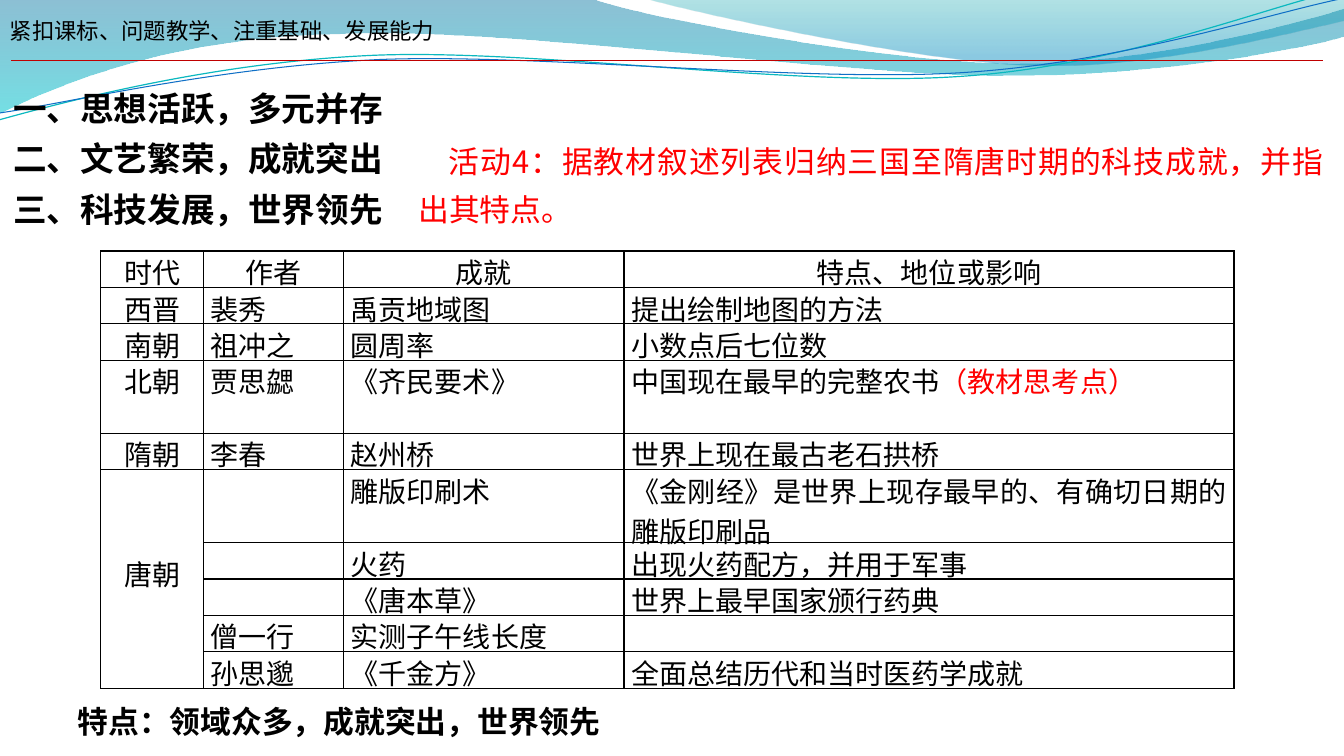
from dataclasses import dataclass
from math import cos, radians, sin

from lxml import etree
from pptx import Presentation
from pptx.dml.color import RGBColor
from pptx.enum.shapes import MSO_CONNECTOR
from pptx.enum.text import MSO_ANCHOR, PP_ALIGN
from pptx.oxml.ns import qn
from pptx.util import Inches, Pt

STRAIGHT = MSO_CONNECTOR.STRAIGHT
TOP, MIDDLE = MSO_ANCHOR.TOP, MSO_ANCHOR.MIDDLE
LEFT, CENTER, JUSTIFY = PP_ALIGN.LEFT, PP_ALIGN.CENTER, PP_ALIGN.JUSTIFY


@dataclass(frozen=True)
class Theme:
    font: str = "Noto Sans CJK SC"
    ink: str = "000000"
    accent: str = "FF0000"
    rule: str = "C00000"
    teal_line: str = "0AB8BF"
    blue_line: str = "0F6FC6"
    wide_wave: tuple = ((0, "0074A1", 45), (100, "00C6CF", 55))
    corner_wave: tuple = ((0, "00A1A9", 30), (80, "008BBF", 45))
    banner: int = 16
    table: int = 20
    note: int = 22
    heading: int = 24


THEME = Theme()

WIDE_WAVE = [
    (0, 0), (5.87, -0.01),
    (6.34, 0.17, 8.85, 0.63, 10.11, 0.63),
    (11.38, 0.63, 12.78, 0.26, 13.33, 0.09),
    (13.35, 0.36),
    (13.11, 0.44, 11.6, 0.76, 9.94, 0.75),
    (8.29, 0.75, 5.09, 0.28, 3.43, 0.34),
    (1.72, 0.36, 0.61, 0.83, -0.01, 1.13),
    (0, 0),
]
CORNER_WAVE = [
    (6.39, -0.01),
    (6.79, 0.11, 9.09, 0.62, 10.25, 0.65),
    (11.41, 0.69, 12.82, 0.32, 13.33, 0.21),
    (13.33, 0), (6.39, -0.01),
]
TEAL_CURVE = [
    (-0.01, 1.19),
    (0.64, 1.01, 2.11, 0.62, 3.69, 0.55),
    (5.27, 0.48, 7.9, 0.87, 9.5, 0.76),
    (11.1, 0.66, 12.52, 0.08, 13.31, -0.1),
]
BLUE_CURVE = [
    (0, 1.12),
    (0.63, 1.03, 2.18, 0.66, 3.78, 0.59),
    (5.37, 0.53, 7.96, 0.82, 9.55, 0.72),
    (11.15, 0.62, 12.55, 0.14, 13.34, -0.02),
]
CURVE_TILT = -2.7
CURVE_CENTER = (6.66, 0.58)

COLUMN_WIDTHS = [1.02, 1.39, 2.78, 6.05]
TALL_ROWS = (3, 5)
TANG_ROWS = (5, 9)
ROWS = [
    ["时代", "作者", "成就", "特点、地位或影响"],
    ["西晋", "裴秀", "禹贡地域图", "提出绘制地图的方法"],
    ["南朝", "祖冲之", "圆周率", "小数点后七位数"],
    ["北朝", "贾思勰", "《齐民要术》", "中国现在最早的完整农书|（教材思考点）"],
    ["隋朝", "李春", "赵州桥", "世界上现在最古老石拱桥"],
    ["唐朝", "", "雕版印刷术", "《金刚经》是世界上现存最早的、有确切日期的雕版印刷品"],
    ["", "", "火药", "出现火药配方，并用于军事"],
    ["", "", "《唐本草》", "世界上最早国家颁行药典"],
    ["", "僧一行", "实测子午线长度", ""],
    ["", "孙思邈", "《千金方》", "全面总结历代和当时医药学成就"],
]


def set_values(target, values):
    for name, value in values.items():
        setattr(target, name, value)


def add_run(paragraph, text, size, color, bold=False):
    run = paragraph.add_run()
    run.text = text
    set_values(run.font, {"size": Pt(size), "name": THEME.font, "bold": bold})
    run.font.color.rgb = RGBColor.from_string(color)
    properties = run._r.get_or_add_rPr()
    etree.SubElement(properties, qn("a:ea"), typeface=THEME.font)


def add_text(slide, box, lines, size, color, bold=False, spacing=1.0,
             align=JUSTIFY, inset=(0, 0), indent=0):
    frame = slide.shapes.add_textbox(*map(Inches, box)).text_frame
    side, edge = map(Inches, inset)
    set_values(frame, {"word_wrap": True, "margin_left": side, "margin_right": side,
                       "margin_top": edge, "margin_bottom": edge})
    for index, line in enumerate(lines):
        paragraph = frame.add_paragraph() if index else frame.paragraphs[0]
        set_values(paragraph, {"alignment": align, "line_spacing": spacing})
        if indent:
            paragraph._p.get_or_add_pPr().set("indent", str(Inches(indent)))
        add_run(paragraph, line, size, color, bold)


def turn(point, center, degrees):
    angle = radians(degrees)
    x, y = point[0] - center[0], point[1] - center[1]
    return (center[0] + x * cos(angle) - y * sin(angle),
            center[1] + x * sin(angle) + y * cos(angle))


def add_outline(slide, segments, origin, tilt=0):
    points = [turn(segment[i:i + 2], CURVE_CENTER, -tilt)
              for segment in segments for i in range(0, len(segment), 2)]
    points = [(Inches(origin[0] + x), Inches(origin[1] + y)) for x, y in points]
    builder = slide.shapes.build_freeform(*points[0])
    builder.add_line_segments(points[1:], close=not tilt)
    shape = builder.convert_to_shape()
    shape.shadow.inherit = False
    shape.rotation = tilt
    steps = iter(list(shape._element.iter(qn("a:lnTo"))))
    for segment in segments[1:]:
        step = next(steps)
        if len(segment) == 6:
            step.tag
            bezier = etree.Element(qn("a:cubicBezTo"))
            step.addprevious(bezier)
            for part in (step, next(steps), next(steps)):
                bezier.append(part[0])
                part.getparent().remove(part)
    return shape


def add_wave(slide, segments, origin, stops):
    shape = add_outline(slide, segments, origin)
    shape.line.fill.background()
    gradient = etree.Element(qn("a:gradFill"), rotWithShape="1")
    stop_list = etree.SubElement(gradient, qn("a:gsLst"))
    for position, color, opacity in stops:
        stop = etree.SubElement(stop_list, qn("a:gs"), pos=str(position * 1000))
        fill = etree.SubElement(stop, qn("a:srgbClr"), val=color)
        etree.SubElement(fill, qn("a:alpha"), val=str(opacity * 1000))
    etree.SubElement(gradient, qn("a:lin"), ang="5400000", scaled="0")
    shape._element.spPr.find(qn("a:custGeom")).addnext(gradient)


def add_curve(slide, segments, origin, color, width):
    shape = add_outline(slide, segments, origin, CURVE_TILT)
    shape.fill.background()
    shape.line.color.rgb = RGBColor.from_string(color)
    shape.line.width = Pt(width)


def add_backdrop(slide, origin):
    add_wave(slide, WIDE_WAVE, origin, THEME.wide_wave)
    add_wave(slide, CORNER_WAVE, origin, THEME.corner_wave)
    add_curve(slide, TEAL_CURVE, origin, THEME.teal_line, 0.85)
    add_curve(slide, BLUE_CURVE, origin, THEME.blue_line, 0.75)


def add_banner(slide, box):
    left, top, width, height = box
    add_text(slide, (left, top, 4.54, height), ["紧扣课标、问题教学、注重基础、发展能力"],
             THEME.banner, THEME.ink, align=LEFT, inset=(0.1, 0.05))
    rule_y = Inches(top + 0.48)
    rule = slide.shapes.add_connector(
        STRAIGHT, Inches(left + 0.11), rule_y, Inches(left + width), rule_y)
    rule.line.color.rgb = RGBColor.from_string(THEME.rule)
    rule.line.width = Pt(1)
    etree.SubElement(rule._element.spPr, qn("a:effectLst"))


def format_cell(cell, text, align, anchor):
    set_values(cell, {"margin_left": Inches(0.07), "margin_right": Inches(0.07),
                      "margin_top": 0, "vertical_anchor": anchor,
                      "margin_bottom": Inches(0.12) if anchor == MIDDLE else 0})
    properties = cell._tc.get_or_add_tcPr()
    for side in ("lnL", "lnR", "lnT", "lnB"):
        border = etree.SubElement(properties, qn(f"a:{side}"), w=str(Pt(1)))
        fill = etree.SubElement(border, qn("a:solidFill"))
        etree.SubElement(fill, qn("a:srgbClr"), val=THEME.ink)
    cell.fill.background()
    if text:
        paragraph = cell.text_frame.paragraphs[0]
        paragraph.alignment = align
        for part, color in zip(text.split("|"), (THEME.ink, THEME.accent)):
            add_run(paragraph, part, THEME.table, color)


def add_achievements(slide, box):
    table = slide.shapes.add_table(len(ROWS), len(COLUMN_WIDTHS), *map(Inches, box)).table
    set_values(table, {"first_row": False, "horz_banding": False})
    for column, width in zip(table.columns, COLUMN_WIDTHS):
        column.width = Inches(width)
    unit = box[3] / (len(ROWS) + len(TALL_ROWS))
    for row_index, texts in enumerate(ROWS):
        table.rows[row_index].height = Inches(unit * (1 + (row_index in TALL_ROWS)))
        for column_index, text in enumerate(texts):
            centered = row_index == 0 or column_index == 0
            anchor = MIDDLE if (row_index, column_index) == (TANG_ROWS[0], 0) else TOP
            format_cell(table.cell(row_index, column_index), text,
                        CENTER if centered else JUSTIFY, anchor)
    table.cell(TANG_ROWS[0], 0).merge(table.cell(TANG_ROWS[1], 0))


def main():
    presentation = Presentation()
    set_values(presentation, {"slide_width": Inches(13.33), "slide_height": Inches(7.5)})
    slide = presentation.slides.add_slide(presentation.slide_layouts[6])
    add_backdrop(slide, (0, 0))
    add_banner(slide, (0, 0.12, 13.12, 0.37))
    add_text(slide, (0.13, 0.77, 4.02, 1.47),
             ["一、思想活跃，多元并存", "二、文艺繁荣，成就突出", "三、科技发展，世界领先"],
             THEME.heading, THEME.ink, bold=True, spacing=1.25)
    add_text(slide, (4.15, 1.31, 8.98, 0.89),
             ["活动4：据教材叙述列表归纳三国至隋唐时期的科技成就，并指出其特点。"],
             THEME.note, THEME.accent, spacing=1.3, indent=0.3)
    add_achievements(slide, (1, 2.49, 11.24, 4.34))
    add_text(slide, (0.77, 6.86, 5.34, 0.41), ["特点：领域众多，成就突出，世界领先"],
             THEME.note, THEME.ink, bold=True, spacing=1.3)
    presentation.save("out.pptx")


if __name__ == "__main__":
    main()
